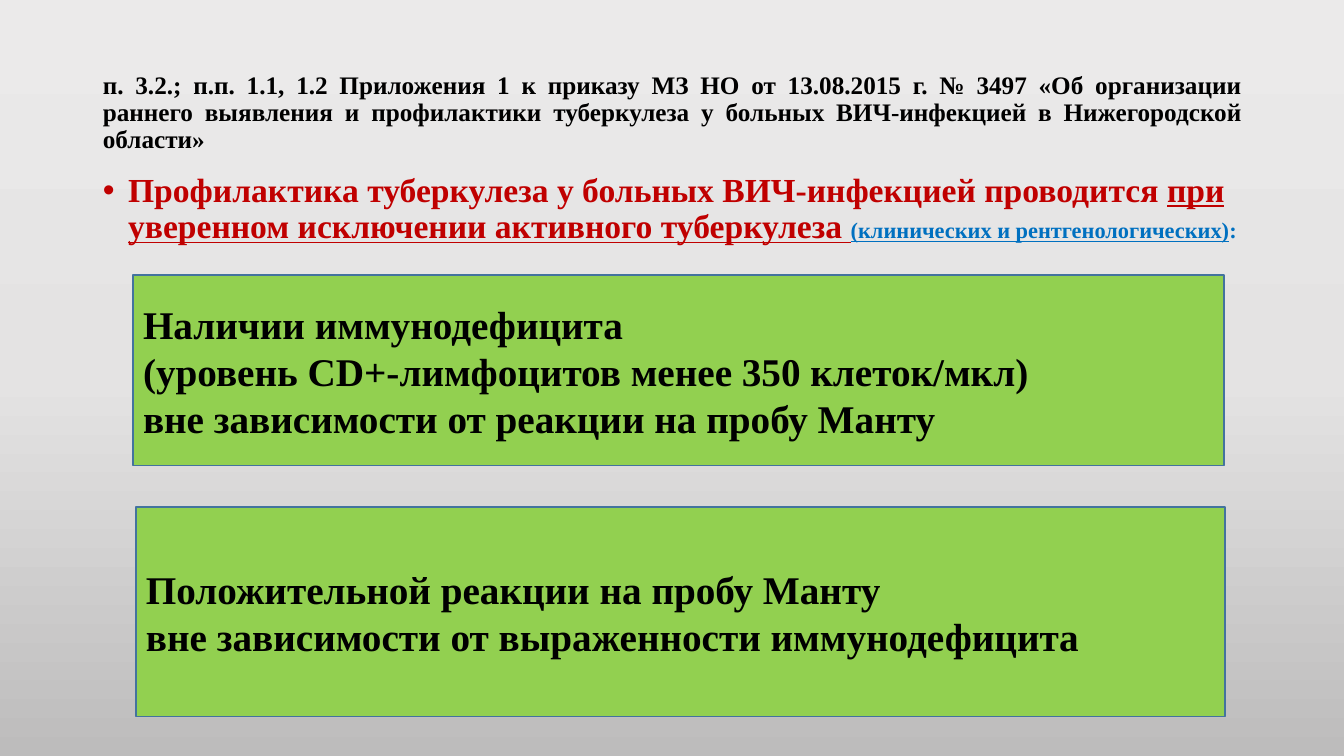
from copy import deepcopy

from lxml import etree
from pptx import Presentation
from pptx.dml.color import RGBColor
from pptx.enum.shapes import MSO_SHAPE
from pptx.enum.text import MSO_ANCHOR, MSO_AUTO_SIZE, PP_ALIGN
from pptx.oxml.ns import qn
from pptx.util import Inches, Pt

RECT = MSO_SHAPE.RECTANGLE
MIDDLE, TOP = MSO_ANCHOR.MIDDLE, MSO_ANCHOR.TOP
LEFT, JUSTIFY = PP_ALIGN.LEFT, PP_ALIGN.JUSTIFY
FIXED = MSO_AUTO_SIZE.NONE

BLACK = RGBColor(0x00, 0x00, 0x00)
RED = RGBColor(0xC0, 0x00, 0x00)
BLUE = RGBColor(0x00, 0x70, 0xC0)
GREEN = RGBColor(0x92, 0xD0, 0x50)
EDGE = RGBColor(0x43, 0x73, 0x9E)
SHADES = [
    (0, RGBColor(0xEB, 0xEA, 0xEA)),
    (0.5, RGBColor(0xE4, 0xE3, 0xE3)),
    (1, RGBColor(0xBD, 0xBC, 0xBC)),
]

TITLE = (
    "п. 3.2.; п.п. 1.1, 1.2 Приложения 1 к приказу МЗ НО от 13.08.2015 г. № 3497 "
    "«Об организации раннего выявления и профилактики туберкулеза "
    "у больных ВИЧ-инфекцией в Нижегородской области»"
)
RULE = [
    ("Профилактика туберкулеза у больных ВИЧ-инфекцией проводится ", {}),
    ("при уверенном исключении активного туберкулеза ", {"underline": True}),
    ("(клинических и рентгенологических)", {"underline": True, "size": Pt(16), "color": BLUE}),
    (":", {"size": Pt(16), "color": BLUE}),
]
CASES = [
    (
        (1.32, 2.73, 10.82, 1.89),
        LEFT,
        [
            "Наличии иммунодефицита",
            "(уровень CD+-лимфоцитов менее 350 клеток/мкл)",
            "вне зависимости от реакции на пробу Манту",
        ],
    ),
    (
        (1.35, 5.03, 10.8, 2.08),
        JUSTIFY,
        [
            "Положительной реакции на пробу Манту",
            "вне зависимости от выраженности иммунодефицита",
        ],
    ),
]


def assign(item, form):
    for key, value in form.items():
        setattr(item, key, value)


class Page:
    base = {"name": "Times New Roman", "bold": True}

    def __init__(self, deck):
        self.slide = deck.slides.add_slide(deck.slide_layouts[1])

    def shade(self, stops):
        fill = self.slide.background.fill
        fill.gradient()
        fill.gradient_angle = 270
        group = self.slide.element.find(".//" + qn("a:gsLst"))
        group.append(deepcopy(group[0]))
        for stop, (place, color) in zip(fill.gradient_stops, stops):
            stop.position = place
            stop.color.rgb = color

    def place(self, shape, spot):
        names = ("left", "top", "width", "height")
        assign(shape, dict(zip(names, map(Inches, spot))))

    def add_text(self, par, text, form):
        run = par.add_run()
        run.text = text
        font = {**self.base, **form}
        run.font.color.rgb = font.pop("color")
        assign(run.font, font)

    def frame(self, shape, anchor):
        frame = shape.text_frame
        assign(frame, {"word_wrap": True, "auto_size": FIXED, "vertical_anchor": anchor})
        return frame

    def title(self, spot, text):
        shape = self.slide.shapes.title
        self.place(shape, spot)
        par = self.frame(shape, MIDDLE).paragraphs[0]
        assign(par, {"alignment": JUSTIFY, "line_spacing": 0.9})
        self.add_text(par, text, {"size": Pt(18), "color": BLACK})

    def bullet(self, spot, runs):
        shape = self.slide.placeholders[1]
        self.place(shape, spot)
        par = self.frame(shape, TOP).paragraphs[0]
        assign(par, {"line_spacing": 0.9, "space_before": Pt(10)})
        props = par._p.get_or_add_pPr()
        props.set("marL", str(Inches(0.25)))
        props.set("indent", str(Inches(-0.25)))
        etree.SubElement(props, qn("a:buFont")).set("typeface", "Arial")
        etree.SubElement(props, qn("a:buChar")).set("char", "•")
        for text, form in runs:
            self.add_text(par, text, {"size": Pt(24), "color": RED, **form})

    def box(self, spot, align, lines):
        shape = self.slide.shapes.add_shape(RECT, *map(Inches, spot))
        shape.shadow.inherit = False
        shape.fill.solid()
        shape.fill.fore_color.rgb = GREEN
        shape.line.color.rgb = EDGE
        shape.line.width = Pt(1)
        frame = self.frame(shape, MIDDLE)
        for index, text in enumerate(lines):
            par = frame.add_paragraph() if index else frame.paragraphs[0]
            par.alignment = align
            self.add_text(par, text, {"size": Pt(28), "color": BLACK})


def main():
    deck = Presentation()
    assign(deck, {"slide_width": Inches(13.33), "slide_height": Inches(7.5)})
    page = Page(deck)
    page.shade(SHADES)
    page.title((0.92, 0.4, 11.5, 1.45), TITLE)
    page.bullet((0.92, 1.67, 11.5, 5.69), RULE)
    for case in CASES:
        page.box(*case)
    deck.save("out.pptx")


if __name__ == "__main__":
    main()
